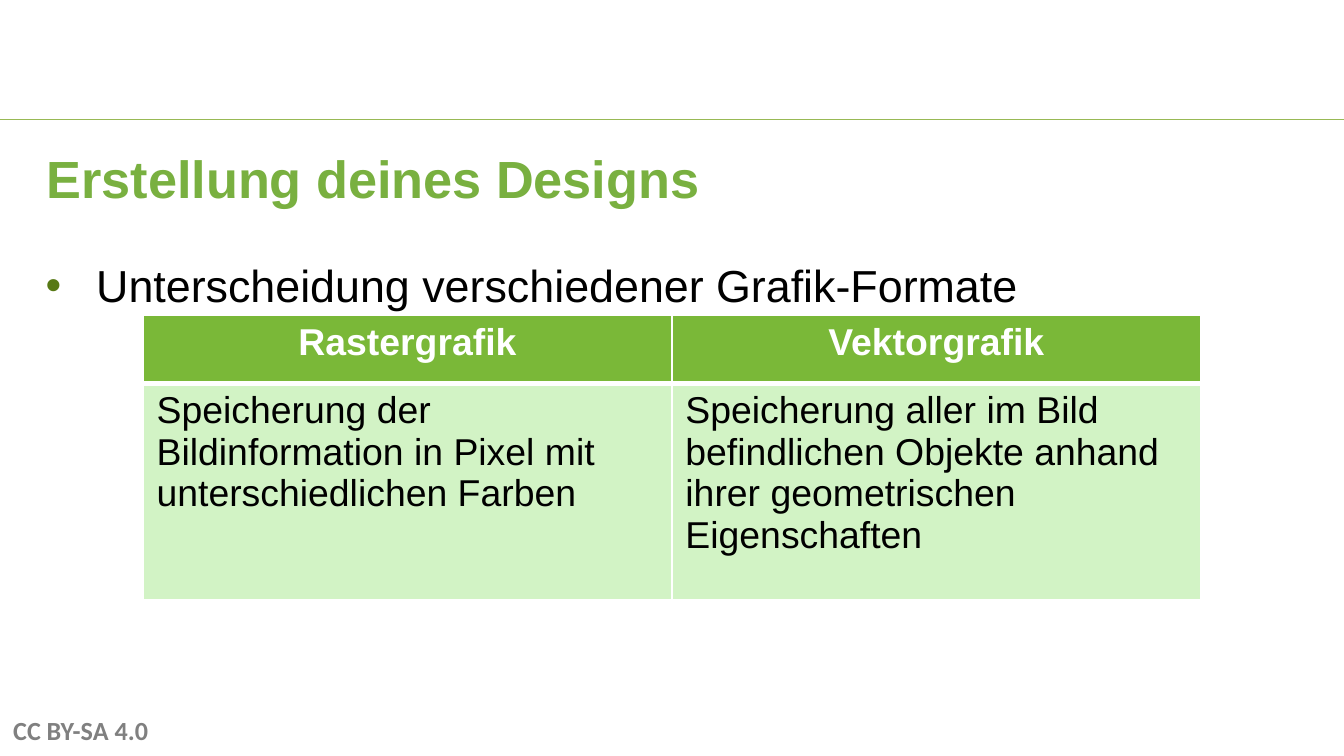
"""Build a slide comparing raster and vector graphics."""
from dataclasses import dataclass

from lxml import etree
from pptx import Presentation
from pptx.dml.color import RGBColor
from pptx.enum import shapes, text
from pptx.oxml import ns
from pptx.util import Pt


@dataclass(frozen=True)
class TextStyle:
    size: float
    color: str
    bold: bool = False
    font: str = "Arial"
    align: text.PP_ALIGN = text.PP_ALIGN.LEFT


@dataclass(frozen=True)
class Theme:
    title: TextStyle = TextStyle(28, "79B040", True)
    body: TextStyle = TextStyle(24, "000000")
    header: TextStyle = TextStyle(20, "FFFFFF", True, align=text.PP_ALIGN.CENTER)
    cell: TextStyle = TextStyle(20, "000000")
    license: TextStyle = TextStyle(14, "808080", True, "Calibri")
    rule: str = "98B955"
    bullet: str = "577915"
    header_fill: str = "7AB838"
    cell_fill: str = "D2F3C5"
    border: str = "FFFFFF"


@dataclass(frozen=True)
class Box:
    left: float
    top: float
    width: float
    height: float

    def lengths(self) -> tuple:
        return Pt(self.left), Pt(self.top), Pt(self.width), Pt(self.height)


@dataclass(frozen=True)
class GraphicType:
    name: str
    description: str


THEME = Theme()
WIDTH, HEIGHT = 720, 405
TITLE_BOX = Box(20, 72, 680, 39.6)
BODY_BOX = Box(19.5, 117.4, 680, 255)
TABLE_BOX = Box(76.7, 168.6, 566.6, 152.7)
LICENSE_BOX = Box(0, 379.4, 108, 24.5)
HEADER_HEIGHT = 36.7
GRAPHIC_TYPES = (
    GraphicType("Rastergrafik",
                "Speicherung der Bildinformation in Pixel mit unterschiedlichen Farben"),
    GraphicType("Vektorgrafik",
                "Speicherung aller im Bild befindlichen Objekte anhand ihrer "
                "geometrischen Eigenschaften"),
)


def write(frame, content: str, style: TextStyle):
    """Fill a text frame with one styled paragraph and return it."""
    frame.word_wrap = True
    paragraph = frame.paragraphs[0]
    paragraph.text = content
    paragraph.alignment = style.align
    font = paragraph.font
    font.name, font.size, font.bold = style.font, Pt(style.size), style.bold
    font.color.rgb = RGBColor.from_string(style.color)
    return paragraph


def set_insets(frame) -> None:
    """Align a main text frame with the slide's left edge of text."""
    frame.auto_size = text.MSO_AUTO_SIZE.NONE
    frame.vertical_anchor = text.MSO_ANCHOR.TOP
    frame.margin_left, frame.margin_top = Pt(5), Pt(6.5)


def add_title(slide, content: str) -> None:
    """Place and format the title placeholder."""
    title = slide.shapes.title
    title.left, title.top, title.width, title.height = TITLE_BOX.lengths()
    write(title.text_frame, content, THEME.title)
    set_insets(title.text_frame)


def add_bullet(slide, content: str) -> None:
    """Add the bulleted statement above the table."""
    frame = slide.shapes.add_textbox(*BODY_BOX.lengths()).text_frame
    set_insets(frame)
    properties = frame.paragraphs[0]._p.get_or_add_pPr()
    properties.set("marL", str(Pt(27)))
    properties.set("indent", str(Pt(-27)))
    color = etree.SubElement(properties, ns.qn("a:buClr"))
    etree.SubElement(color, ns.qn("a:srgbClr"), val=THEME.bullet)
    etree.SubElement(properties, ns.qn("a:buFont"), typeface="Arial")
    etree.SubElement(properties, ns.qn("a:buChar"), char="•")
    write(frame, content, THEME.body).line_spacing = 1.5


def add_rule(slide) -> None:
    """Draw the line across the top of the slide."""
    rule = slide.shapes.add_connector(
        shapes.MSO_CONNECTOR.STRAIGHT, Pt(0), Pt(64), Pt(WIDTH), Pt(64))
    rule.line.color.rgb = RGBColor.from_string(THEME.rule)
    rule.line.width = Pt(0.75)
    etree.SubElement(rule._element.spPr, ns.qn("a:effectLst"))


def set_borders(cell, top: float, bottom: float) -> None:
    """Give a cell solid borders, with the widths of top and bottom in points."""
    properties = cell._tc.get_or_add_tcPr()
    widths = {"lnL": 1, "lnR": 1, "lnT": top, "lnB": bottom}
    for tag, width in widths.items():
        line = etree.SubElement(properties, ns.qn(f"a:{tag}"), w=str(Pt(width)))
        fill = etree.SubElement(line, ns.qn("a:solidFill"))
        etree.SubElement(fill, ns.qn("a:srgbClr"), val=THEME.border)


def fill_cell(cell, content: str, style: TextStyle, fill: str,
              top: float, bottom: float) -> None:
    """Write, border and colour one table cell."""
    write(cell.text_frame, content, style)
    set_borders(cell, top, bottom)
    cell.fill.solid()
    cell.fill.fore_color.rgb = RGBColor.from_string(fill)


def add_comparison(slide, graphic_types: tuple[GraphicType, ...]) -> None:
    """Add a table with one column for each graphic type."""
    table = slide.shapes.add_table(2, len(graphic_types), *TABLE_BOX.lengths()).table
    table.rows[0].height = Pt(HEADER_HEIGHT)
    table.rows[1].height = Pt(TABLE_BOX.height - HEADER_HEIGHT)
    for column, graphic in enumerate(graphic_types):
        fill_cell(table.cell(0, column), graphic.name,
                  THEME.header, THEME.header_fill, top=1, bottom=3)
        fill_cell(table.cell(1, column), graphic.description,
                  THEME.cell, THEME.cell_fill, top=3, bottom=1)


def main() -> None:
    """Build and save the presentation."""
    presentation = Presentation()
    presentation.slide_width, presentation.slide_height = Pt(WIDTH), Pt(HEIGHT)
    slide = presentation.slides.add_slide(presentation.slide_layouts[5])
    add_rule(slide)
    license_box = slide.shapes.add_textbox(*LICENSE_BOX.lengths())
    write(license_box.text_frame, "CC BY-SA 4.0", THEME.license)
    add_title(slide, "Erstellung deines Designs")
    add_bullet(slide, "Unterscheidung verschiedener Grafik-Formate")
    add_comparison(slide, GRAPHIC_TYPES)
    presentation.save("out.pptx")


if __name__ == "__main__":
    main()
